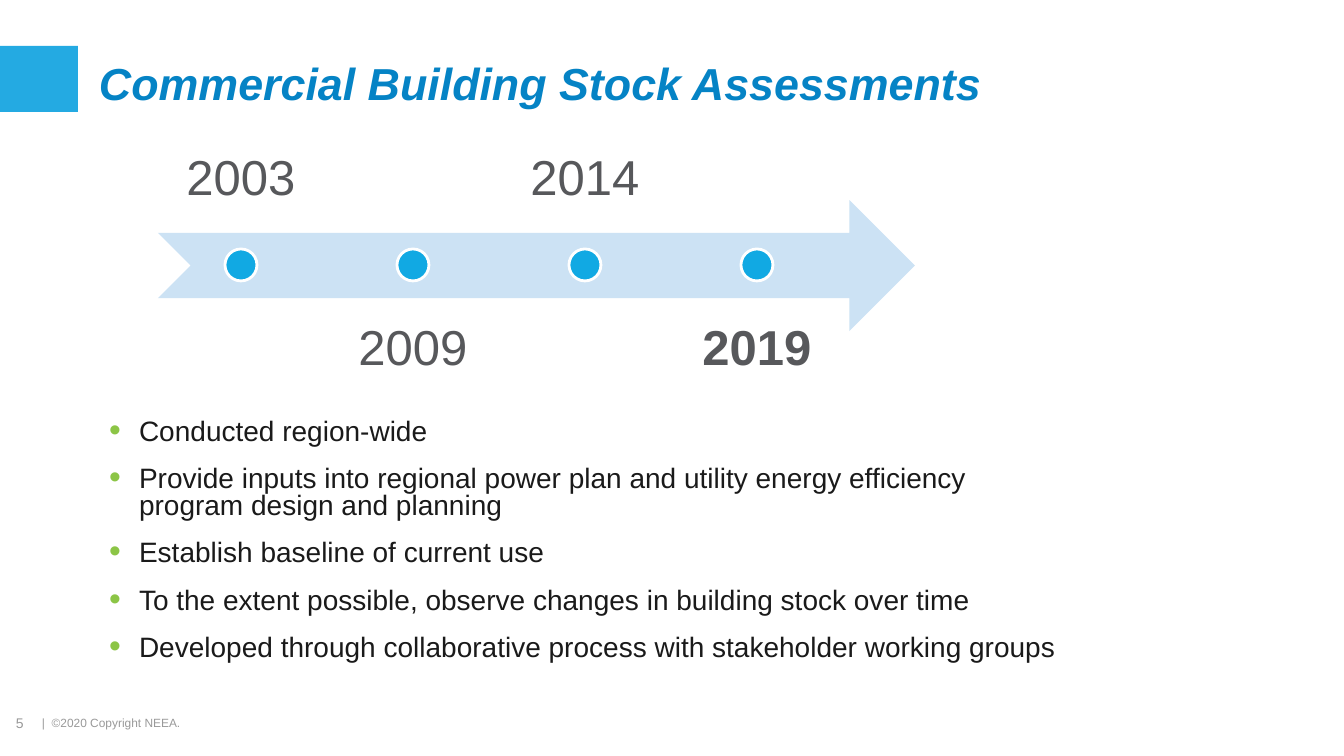
from lxml import etree
from pptx import Presentation
from pptx.dml.color import RGBColor
from pptx.enum.shapes import MSO_SHAPE
from pptx.enum.text import MSO_ANCHOR, PP_ALIGN
from pptx.oxml.ns import qn
from pptx.util import Emu, Pt

RECT = MSO_SHAPE.RECTANGLE
ARROW = MSO_SHAPE.NOTCHED_RIGHT_ARROW
OVAL = MSO_SHAPE.OVAL
TOP, MIDDLE, BOTTOM = MSO_ANCHOR.TOP, MSO_ANCHOR.MIDDLE, MSO_ANCHOR.BOTTOM
LEFT, CENTER = PP_ALIGN.LEFT, PP_ALIGN.CENTER

SKY = RGBColor(0x24, 0xAA, 0xE2)
BLUE = RGBColor(0x05, 0x83, 0xC5)
PALE = RGBColor(0xCC, 0xE2, 0xF4)
AZURE = RGBColor(0x11, 0xA9, 0xE3)
WHITE = RGBColor(0xFF, 0xFF, 0xFF)
SLATE = RGBColor(0x57, 0x58, 0x5B)
INK = RGBColor(0x1A, 0x1A, 0x1A)
GRAY = RGBColor(0x99, 0x99, 0x99)
GREEN = RGBColor(0x8C, 0xC5, 0x46)

YEARS = ["2003", "2009", "2014", "2019"]
POINTS = [
    "Conducted region-wide",
    "Provide inputs into regional power plan and utility energy efficiency "
    "program design and planning",
    "Establish baseline of current use",
    "To the extent possible, observe changes in building stock over time",
    "Developed through collaborative process with stakeholder working groups",
]


def px(count):
    """Turn whole pixels into EMU."""
    return Emu(round(count * 914400 / 100.8))


class Painter:
    """Draw styled elements on one slide."""

    font = "Arial"

    def __init__(self, slide):
        self.shapes = slide.shapes

    def shape(self, kind, x, y, w, h, fill, line=None):
        """Add a flat preset shape."""
        item = self.shapes.add_shape(kind, px(x), px(y), px(w), px(h))
        item.shadow.inherit = False
        item.fill.solid()
        item.fill.fore_color.rgb = fill
        if line is None:
            item.line.fill.background()
        else:
            item.line.color.rgb = line
            item.line.width = Pt(2)

    def text(self, lines, x, y, w, h, size, color, bold=False, italic=False,
             anchor=TOP, align=LEFT, pad=(0, 0), space=1.0):
        """Add a text box and return its paragraphs."""
        frame = self.shapes.add_textbox(px(x), px(y), px(w), px(h)).text_frame
        frame.word_wrap = True
        frame.vertical_anchor = anchor
        frame.margin_left = frame.margin_right = px(pad[0])
        frame.margin_top = frame.margin_bottom = px(pad[1])
        frame.text = "\n".join(lines)
        for para in frame.paragraphs:
            para.alignment = align
            para.line_spacing = space
            for run in para.runs:
                font = run.font
                font.name, font.size = self.font, Pt(size)
                font.bold, font.italic = bold, italic
                font.color.rgb = color
        return frame.paragraphs

    def bullets(self, lines, x, y, w, h, size):
        """Add a list with green bullets."""
        paras = self.text(lines, x, y, w, h, size, INK, pad=(10, 5), space=0.8)
        for index, para in enumerate(paras):
            if index:
                para.space_before = Pt(3.6)
            para.space_after = Pt(10.9)
            props = para._p.get_or_add_pPr()
            props.set("marL", str(px(30)))
            props.set("indent", str(-px(30)))
            tint = etree.SubElement(props, qn("a:buClr"))
            etree.SubElement(tint, qn("a:srgbClr"), val=str(GREEN))
            etree.SubElement(props, qn("a:buSzPct"), val="120000")
            etree.SubElement(props, qn("a:buFont"), typeface=self.font)
            etree.SubElement(props, qn("a:buChar"), char="•")

    def marker(self, index, year):
        """Add one dot and its year, above and below the arrow in turn."""
        mid = 241 + 172 * index
        low = index % 2 == 1
        self.text([year], mid - 82, 297 if low else 102, 164, 131, 35, SLATE,
                  bold=year == YEARS[-1], anchor=TOP if low else BOTTOM,
                  align=CENTER, pad=(20, 27), space=0.9)
        self.shape(OVAL, mid - 16, 249, 32, 32, AZURE, WHITE)


def main():
    """Build and save the slide."""
    deck = Presentation()
    deck.slide_width, deck.slide_height = px(1344), px(756)
    pen = Painter(deck.slides.add_slide(deck.slide_layouts[6]))
    pen.shape(RECT, 0, 46, 78, 66, SKY)
    pen.text(["Commercial Building Stock Assessments"], 99, 53, 1148, 60, 32,
             BLUE, bold=True, italic=True, anchor=MIDDLE)
    pen.shape(ARROW, 158, 200, 757, 131, PALE)
    for index, year in enumerate(YEARS):
        pen.marker(index, year)
    pen.bullets(POINTS, 99, 415, 969, 275, 20)
    pen.text(["5"], 16, 715, 24, 17, 10, GRAY)
    pen.text(["| \u00a0©2020 Copyright NEEA.".replace("\u00a0", " ")],
             42, 716, 212, 15, 8.5, GRAY)
    deck.save("out.pptx")


if __name__ == "__main__":
    main()
